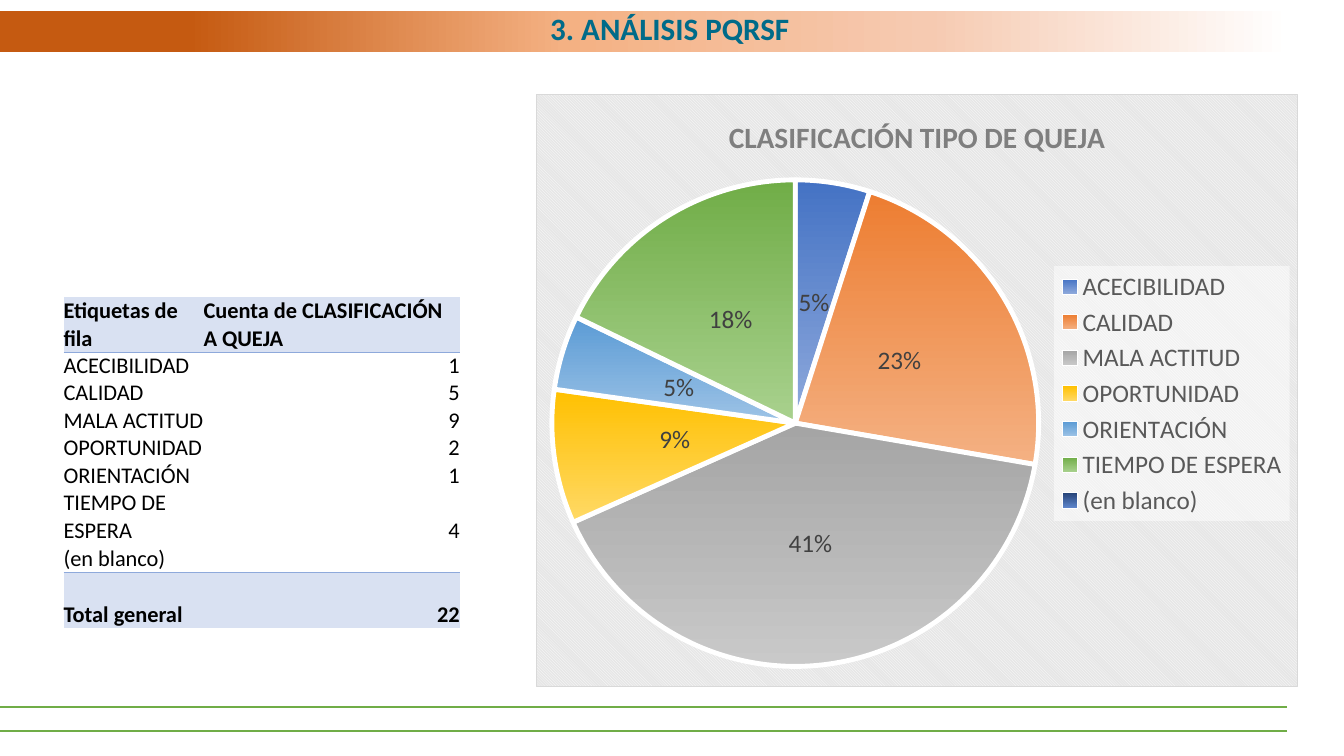
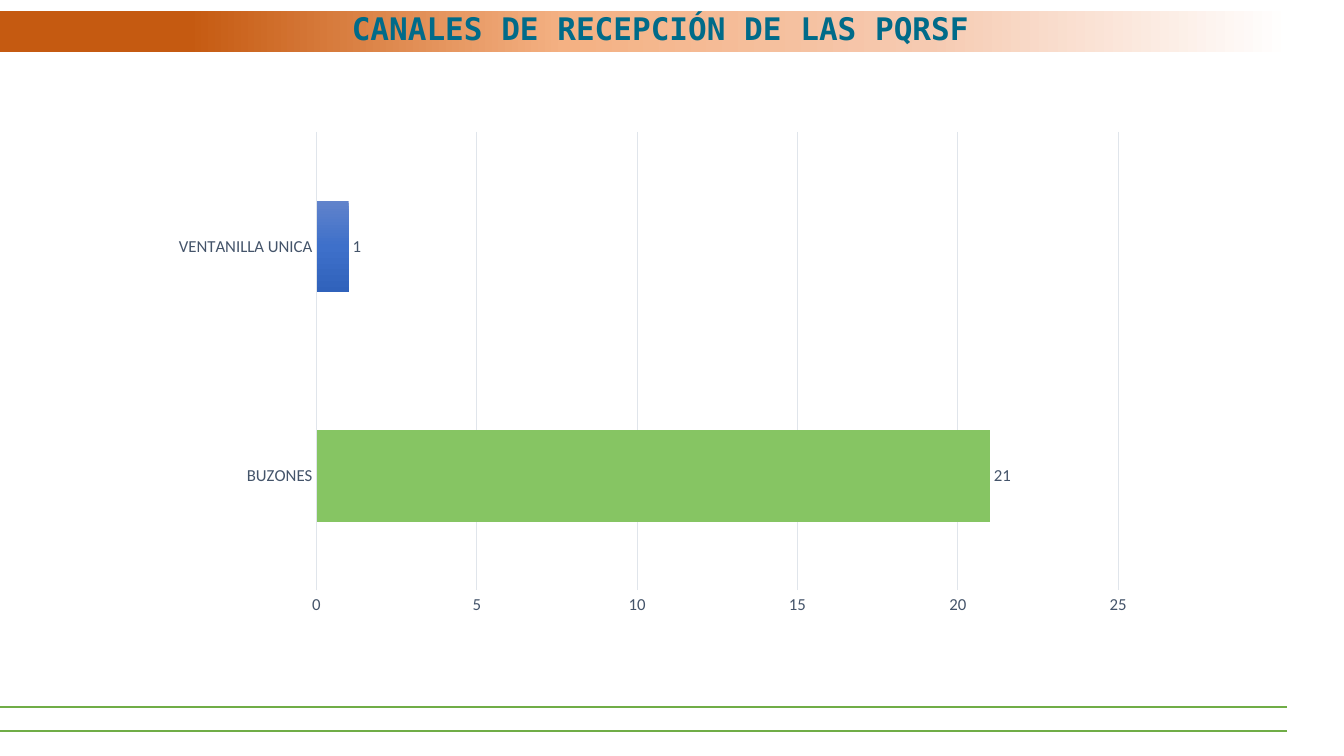
from pptx import Presentation
from pptx import util as u
from pptx.chart import data as cd
from pptx.dml.color import RGBColor
from pptx.enum import chart as ch, shapes, text
from pptx.oxml import parse_xml
from pptx.oxml.ns import nsdecls, qn

Pt = u.Pt
HUE = {
    "band": ["C55A11", "F4B183", "F6CAB1", "FFFFFF"],
    "rule": "70AD47",
    "title": "006B89",
    "ink": "000000",
    "head": "D9E1F2",
    "edge": "8EA9DB",
    "white": "FFFFFF",
    "back": "E6E6E6",
    "frame": "D9D9D9",
    "name": "7F7F7F",
    "key": "595959",
    "label": "404040",
    "axis": "44546A",
    "grid": "E0E5EB",
    "bar": ["6183CB", "3E70CA", "3062BB"],
    "main": "86C563",
}
SLICES = [
    ("ACECIBILIDAD", 1, 5, ["4472C4", "8FAADC"]),
    ("CALIDAD", 5, 23, ["ED7D31", "F4B183"]),
    ("MALA ACTITUD", 9, 41, ["A5A5A5", "C9C9C9"]),
    ("OPORTUNIDAD", 2, 9, ["FFC000", "FFD966"]),
    ("ORIENTACIÓN", 1, 5, ["5B9BD5", "9DC3E6"]),
    ("TIEMPO DE ESPERA", 4, 18, ["70AD47", "A9D18E"]),
    ("(en blanco)", "", None, ["264478", "5F86CC"]),
]


def rgb(hue):
    return RGBColor.from_string(hue)


def style(font, size, hue, bold=False, face="Calibri"):
    font.name, font.size, font.bold = face, Pt(size), bold
    font.color.rgb = rgb(hue)


def write(frame, words, align=text.PP_ALIGN.LEFT, space=None, **look):
    para = frame.paragraphs[0]
    para.alignment = align
    para.line_spacing = space
    run = para.add_run()
    run.text = words
    style(run.font, **look)


def xml(tag, body, attrs=""):
    return parse_xml(f"<{tag} {nsdecls('a', 'c')} {attrs}>{body}</{tag}>")


def solid(hue, alpha=100):
    return (f'<a:solidFill><a:srgbClr val="{hue}"><a:alpha val="{alpha * 1000}"/>'
            f"</a:srgbClr></a:solidFill>")


def blend(fill, root, hues, spots, turn=0):
    fill.gradient()
    fill.gradient_angle = -turn % 360
    stops = list(root.iter(qn("a:gsLst")))[-1]
    for stop in list(stops):
        stops.remove(stop)
    for hue, spot in zip(hues, spots):
        stops.append(xml("a:gs", f'<a:srgbClr val="{hue}"/>', f'pos="{spot * 1000}"'))


def layout(x, y, w, h, inner=False):
    target = '<c:layoutTarget val="inner"/>' if inner else ""
    modes = "".join(f'<c:{k}Mode val="edge"/>' for k in "xy")
    sizes = "".join(f'<c:{k} val="{v}"/>' for k, v in zip("xywh", (x, y, w, h)))
    return xml("c:layout", f"<c:manualLayout>{target}{modes}{sizes}</c:manualLayout>")


class Deck:
    def __init__(self):
        self.prs = Presentation()
        self.prs.slide_width, self.prs.slide_height = Pt(960), Pt(540)

    def page(self, words, face="Calibri"):
        self.slide = self.prs.slides.add_slide(self.prs.slide_layouts[5])
        self.rule(522)
        self.band()
        self.rule(504.7)
        self.title(words, face)

    def rule(self, y):
        line = self.slide.shapes.add_connector(
            shapes.MSO_CONNECTOR.STRAIGHT, Pt(919.4), Pt(y), 0, Pt(y))
        line.line.color.rgb = rgb(HUE["rule"])
        line.line.width = Pt(1.5)
        line.element.spPr.append(xml("a:effectLst", ""))

    def band(self):
        band = self.slide.shapes.add_shape(
            shapes.MSO_SHAPE.RECTANGLE, 0, Pt(8), Pt(960), Pt(29))
        band.shadow.inherit = False
        band.line.fill.background()
        blend(band.fill, band.element, HUE["band"], (14, 42, 69, 96))

    def title(self, words, face):
        box = self.slide.shapes.title
        box.left, box.top, box.width, box.height = Pt(30), Pt(8), Pt(897), Pt(29)
        self.slide.shapes.element.append(box.element)
        frame = box.text_frame
        frame.word_wrap = True
        frame.auto_size = text.MSO_AUTO_SIZE.NONE
        frame.vertical_anchor = text.MSO_ANCHOR.MIDDLE
        write(frame, words, text.PP_ALIGN.CENTER, 0.8,
              size=22.2, hue=HUE["title"], bold=True, face=face)

    def cell(self, cell, words, right=False, bold=False, top=False, base=False):
        cell.margin_left = cell.margin_right = cell.margin_top = cell.margin_bottom = 0
        cell.vertical_anchor = text.MSO_ANCHOR.BOTTOM
        write(cell.text_frame, words,
              text.PP_ALIGN.RIGHT if right else text.PP_ALIGN.LEFT,
              size=16, hue=HUE["ink"], bold=bold)
        props = cell._tc.get_or_add_tcPr()
        for side, shown in zip("LRTB", (False, False, top, base)):
            body = solid(HUE["edge"]) if shown else "<a:noFill/>"
            props.append(xml(f"a:ln{side}", body, 'w="6350"'))
        if bold:
            cell.fill.solid()
            cell.fill.fore_color.rgb = rgb(HUE["head"])
        else:
            cell.fill.background()

    def table(self, rows, box, widths, heights):
        table = self.slide.shapes.add_table(
            len(rows), len(widths), *map(Pt, box)).table
        table.first_row = table.horz_banding = False
        for col, width in zip(table.columns, widths):
            col.width = Pt(width)
        last = len(rows) - 1
        for i, row in enumerate(rows):
            table.rows[i].height = Pt(heights[i])
            for j, words in enumerate(row):
                self.cell(table.cell(i, j), str(words), right=j > 0 and i > 0,
                          bold=i in (0, last), top=i in (1, last),
                          base=i in (0, last - 1))

    def chart(self, kind, cats, vals, box, plot):
        data = cd.CategoryChartData()
        data.categories = cats
        data.add_series("Series 1", vals)
        chart = self.slide.shapes.add_chart(kind, *map(Pt, box), data).chart
        style(chart.font, 18, HUE["ink"])
        area = chart.element.find(".//" + qn("c:plotArea"))
        for old in area.findall(qn("c:layout")):
            area.remove(old)
        area.insert(0, layout(*plot, inner=True))
        return chart

    def labels(self, series, size, hue, spot):
        tags = series.data_labels
        style(tags.font, size, hue)
        tags.position = spot
        return tags

    def pie(self, cats, vals, hues, box):
        chart = self.chart(ch.XL_CHART_TYPE.PIE, cats, vals, box,
                           (0.02, 0.14, 0.64, 0.83))
        root = chart.element
        chart.has_title = True
        write(chart.chart_title.text_frame, "CLASIFICACIÓN TIPO DE QUEJA",
              text.PP_ALIGN.CENTER, size=21, hue=HUE["name"], bold=True)
        chart.plots[0].vary_by_categories = True
        series = chart.plots[0].series[0]
        for i, pair in enumerate(hues):
            look = series.points[i].format
            blend(look.fill, root, pair, (0, 100), 90)
            look.line.color.rgb = rgb(HUE["white"])
            look.line.width = Pt(3.5)
        tags = self.labels(series, 18, HUE["label"], ch.XL_LABEL_POSITION.CENTER)
        tags.show_percentage, tags.show_value = True, False
        tags.number_format, tags.number_format_is_linked = "0%", False

        chart.has_legend = True
        key = chart.legend
        key.position = ch.XL_LEGEND_POSITION.RIGHT
        key.include_in_layout = False
        style(key.font, 18, HUE["key"])
        node = root.find(".//" + qn("c:legend"))
        node.find(qn("c:overlay")).addprevious(layout(0.68, 0.29, 0.31, 0.43))
        node.find(qn("c:txPr")).addprevious(xml("c:spPr", solid(HUE["white"], 50)))
        back = (f'<a:pattFill prst="dkDnDiag"><a:fgClr><a:srgbClr val="{HUE["white"]}"/>'
                f'</a:fgClr><a:bgClr><a:srgbClr val="{HUE["back"]}"/></a:bgClr></a:pattFill>')
        edge = f'<a:ln w="9525">{solid(HUE["frame"])}</a:ln>'
        root.find(qn("c:chart")).addnext(xml("c:spPr", back + edge))

    def bars(self, cats, vals, box):
        chart = self.chart(ch.XL_CHART_TYPE.BAR_CLUSTERED, cats, vals, box,
                           (0.16, 0.02, 0.81, 0.91))
        chart.has_title = chart.has_legend = False
        plot = chart.plots[0]
        plot.vary_by_categories = False
        plot.gap_width = 150
        series = plot.series[0]
        series.invert_if_negative = False
        blend(series.format.fill, chart.element, HUE["bar"], (0, 50, 100), 90)
        main = series.points[0].format.fill
        main.solid()
        main.fore_color.rgb = rgb(HUE["main"])
        tags = self.labels(series, 12, HUE["axis"], ch.XL_LABEL_POSITION.OUTSIDE_END)
        tags.show_value = True

        cat, val = chart.category_axis, chart.value_axis
        for axis in (cat, val):
            axis.major_tick_mark = axis.minor_tick_mark = ch.XL_TICK_MARK.NONE
            style(axis.tick_labels.font, 12, HUE["axis"])
        cat.has_major_gridlines = False
        val.has_major_gridlines = True
        val.minimum_scale, val.maximum_scale, val.major_unit = 0, 25, 5
        val.format.line.fill.background()
        for look in (cat.format, val.major_gridlines.format):
            look.line.color.rgb = rgb(HUE["grid"])
            look.line.width = Pt(0.75)


def main():
    deck = Deck()
    names, counts, shares, hues = zip(*SLICES)
    deck.page("3. ANÁLISIS PQRSF")
    deck.pie(names, shares, hues, (383, 67, 544, 424))
    rows = [("Etiquetas de fila", "Cuenta de CLASIFICACIÓN A QUEJA"),
            *zip(names, counts), ("Total general", 22)]
    deck.table(rows, (45.4, 212.4, 283, 160), (100, 183), [15] * 8 + [40])

    deck.page("CANALES DE RECEPCIÓN DE LAS PQRSF ", "DejaVu Sans Mono")
    deck.bars(("BUZONES", "VENTANILLA UNICA"), (21, 1), (113, 87, 707, 360))
    deck.prs.save("out.pptx")


if __name__ == "__main__":
    main()
